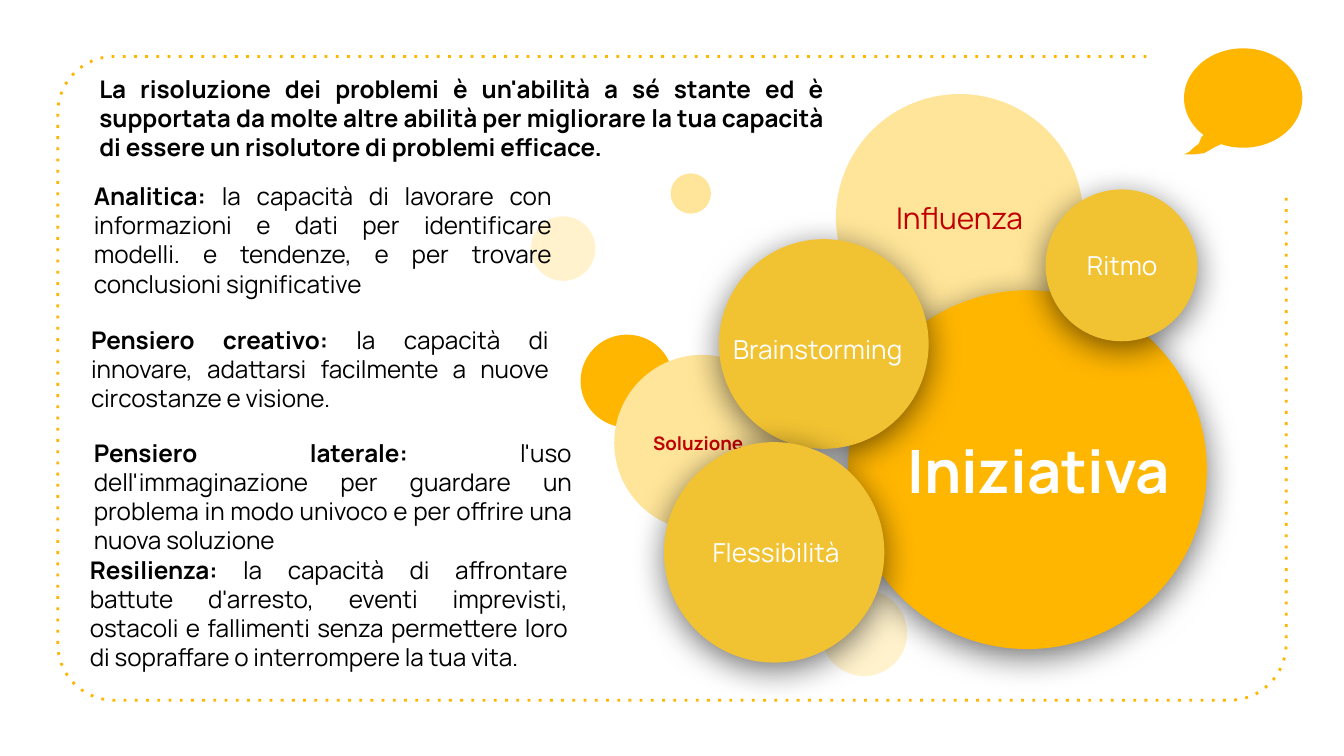
from dataclasses import dataclass
from math import cos, radians, sin

from lxml.etree import SubElement
from pptx import Presentation
from pptx.dml.color import RGBColor
from pptx.enum.dml import MSO_LINE
from pptx.enum.shapes import MSO_SHAPE
from pptx.enum.text import MSO_ANCHOR, MSO_AUTO_SIZE, PP_ALIGN
from pptx.oxml.ns import qn
from pptx.util import Inches, Pt


@dataclass(frozen=True)
class Theme:
    font: str = "Manrope"
    amber: str = "FFB600"
    gold: str = "F1C232"
    sand: str = "FFE599"
    cream: str = "FFF2CC"
    red: str = "C00000"
    white: str = "FFFFFF"
    black: str = "000000"
    headline: float = 32
    topic: float = 16
    label: float = 14
    body: float = 13
    small: float = 10


THEME = Theme()

# left, top, diameter, colour
BACK_CIRCLES = [
    (6.11, 4.39, 0.64, THEME.cream),
    (3.95, 1.61, 0.48, THEME.cream),
    (6.22, 0.7, 1.84, THEME.sand),
    (4.32, 2.49, 0.69, THEME.amber),
    (4.99, 1.29, 0.3, THEME.sand),
    (4.57, 2.64, 1.31, THEME.sand),
]

# circle, colour, label box, label, size, bold
RAISED_CIRCLES = [
    ((6.31, 2.16, 2.67), THEME.amber, (6.64, 2.86, 2.18, 1.27), "Iniziativa", THEME.headline, True),
    ((5.35, 1.78, 1.56), THEME.gold, (5.28, 2.08, 1.65, 1.03), "Brainstorming ", THEME.label, False),
    ((4.94, 3.29, 1.64), THEME.gold, (5.13, 3.59, 1.29, 1.03), "Flessibilità", THEME.label, False),
    ((7.78, 1.41, 1.13), THEME.gold, (7.93, 1.6, 0.84, 0.75), "Ritmo", THEME.label, False),
]

# box, bold lead, plain text
PARAGRAPHS = [
    ((0.64, 0.5, 5.58, 0.76),
     "La risoluzione dei problemi è un'abilità a sé stante ed è supportata da molte altre abilità "
     "per migliorare la tua capacità di essere un risolutore di problemi efficace.", ""),
    ((0.6, 1.3, 3.6, 0.98), "Analitica: ",
     "la capacità di lavorare con informazioni e dati per identificare modelli. e tendenze, "
     "e per trovare conclusioni significative "),
    ((0.58, 2.37, 3.6, 0.76), "Pensiero creativo: ",
     "la capacità di innovare, adattarsi facilmente a nuove circostanze e visione."),
    ((0.6, 3.21, 3.75, 0.76), "Pensiero laterale: ",
     "l'uso dell'immaginazione per guardare un problema in modo univoco e per offrire "
     "una nuova soluzione"),
    ((0.57, 4.08, 3.75, 0.98), "Resilienza: ",
     "la capacità di affrontare battute d'arresto, eventi imprevisti, ostacoli e fallimenti "
     "senza permettere loro di sopraffare o interrompere la tua vita."),
]


def rgb(colour):
    return RGBColor.from_string(colour)


def arc(centre_x, centre_y, radius_x, radius_y, start, end, steps):
    """Points along an ellipse; angles in degrees, clockwise from the right."""
    angles = [radians(start + (end - start) * i / steps) for i in range(steps + 1)]
    return [(centre_x + radius_x * cos(a), centre_y + radius_y * sin(a)) for a in angles]


def add_outline(page, points, close):
    corners = [(Inches(x), Inches(y)) for x, y in points]
    builder = page.shapes.build_freeform(*corners[0])
    builder.add_line_segments(corners[1:], close=close)
    shape = builder.convert_to_shape()
    shape.shadow.inherit = False
    return shape


def add_frame(page):
    left, top, right, bottom, radius = 0.43, 0.42, 9.57, 5.21, 0.42
    points = [
        (8.53, top),
        *arc(left + radius, top + radius, radius, radius, 270, 180, 16),
        *arc(left + radius, bottom - radius, radius, radius, 180, 90, 16),
        *arc(right - radius, bottom - radius, radius, radius, 90, 0, 16),
        (right, 1.46),
    ]
    frame = add_outline(page, points, close=False)
    frame.fill.background()
    frame.line.color.rgb = rgb(THEME.amber)
    frame.line.width = Pt(1.5)
    frame.line.dash_style = MSO_LINE.ROUND_DOT
    frame._element.spPr.find(qn("a:ln")).find(qn("a:prstDash")).set("val", "dot")


def add_speech_bubble(page):
    tail = [(8.94, 1.02), (8.92, 1.07), (8.88, 1.1), (8.85, 1.13), (8.81, 1.15),
            (8.88, 1.15), (8.96, 1.14), (9.03, 1.1)]
    bubble = add_outline(page, arc(9.25, 0.73, 0.44, 0.37, 112, -228, 68) + tail, close=True)
    bubble.fill.solid()
    bubble.fill.fore_color.rgb = rgb(THEME.amber)
    bubble.line.fill.background()


def add_circle(page, left, top, diameter, colour):
    circle = page.shapes.add_shape(
        MSO_SHAPE.OVAL, Inches(left), Inches(top), Inches(diameter), Inches(diameter))
    circle.shadow.inherit = False
    circle.fill.solid()
    circle.fill.fore_color.rgb = rgb(colour)
    circle.line.fill.background()
    return circle


def add_soft_shadow(shape):
    effects = shape._element.spPr.find(qn("a:effectLst"))
    shadow = SubElement(effects, qn("a:outerShdw"), blurRad=str(Pt(18)), dist=str(Pt(4)),
                        dir="5400000", algn="bl", rotWithShape="0")
    colour = SubElement(shadow, qn("a:srgbClr"), val=THEME.black)
    SubElement(colour, qn("a:alpha"), val="54000")


def format_span(span, size, colour, bold):
    span.font.name = THEME.font
    span.font.size = Pt(size)
    span.font.bold = bold
    span.font.color.rgb = rgb(colour)


def write_label(shape, text, size, colour, bold=False, align=PP_ALIGN.CENTER):
    frame = shape.text_frame
    frame.word_wrap = True
    frame.vertical_anchor = MSO_ANCHOR.MIDDLE
    frame.margin_left = frame.margin_right = Inches(0.1)
    frame.margin_top = frame.margin_bottom = Inches(0.1)
    frame.text = text
    para = frame.paragraphs[0]
    para.alignment = align
    format_span(para.runs[0], size, colour, bold)


def add_text_box(page, box):
    return page.shapes.add_textbox(*map(Inches, box))


def add_paragraph_box(page, box, lead, text):
    frame = add_text_box(page, box).text_frame
    frame.word_wrap = True
    frame.auto_size = MSO_AUTO_SIZE.SHAPE_TO_FIT_TEXT
    para = frame.paragraphs[0]
    para.text = lead
    para.alignment = PP_ALIGN.JUSTIFY
    format_span(para.runs[0], THEME.body, THEME.black, True)
    if text:
        span = para.add_run()
        span.text = text
        format_span(span, THEME.body, THEME.black, False)


def main():
    deck = Presentation()
    deck.slide_width = Inches(10)
    deck.slide_height = deck.slide_width * 9 // 16
    page = deck.slides.add_slide(deck.slide_layouts[6])

    add_frame(page)
    circles = [add_circle(page, *circle) for circle in BACK_CIRCLES]
    write_label(circles[2], "Influenza", THEME.topic, THEME.red)
    write_label(circles[5], "Soluzione", THEME.small, THEME.red, True, PP_ALIGN.LEFT)
    for circle, colour, box, label, size, bold in RAISED_CIRCLES:
        add_soft_shadow(add_circle(page, *circle, colour))
        write_label(add_text_box(page, box), label, size, THEME.white, bold)
    add_speech_bubble(page)
    for box, lead, text in PARAGRAPHS:
        add_paragraph_box(page, box, lead, text)

    deck.save("out.pptx")


if __name__ == "__main__":
    main()
